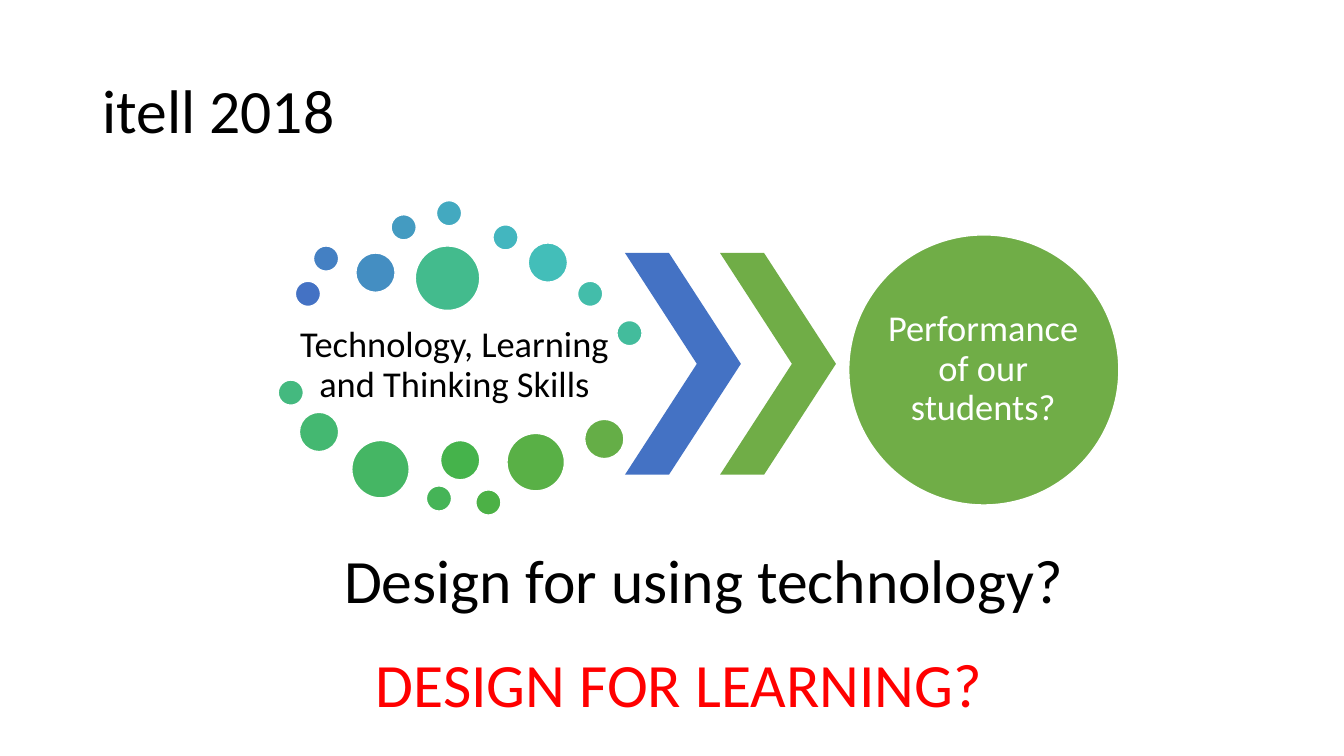
from dataclasses import dataclass
from enum import Enum

from pptx import Presentation
from pptx.dml.color import RGBColor
from pptx.enum.shapes import MSO_SHAPE
from pptx.enum.text import MSO_ANCHOR, PP_ALIGN
from pptx.shapes.autoshape import Shape
from pptx.slide import Slide
from pptx.util import Inches, Length, Pt

COLUMNS, ROWS = 40, 22.5
CELL = Inches(40 / 3) / COLUMNS

BLACK, WHITE, RED = "000000", "FFFFFF", "FF0000"
BLUE, GREEN = "4472C4", "70AD47"


class Size(Enum):
    SMALL = 0.75
    MEDIUM = 1.17
    LARGE = 1.71
    HUGE = 1.92


@dataclass(frozen=True)
class Area:
    column: float
    row: float
    columns: float
    rows: float

    def lengths(self) -> tuple[Length, ...]:
        return tuple(cells(n) for n in (self.column, self.row, self.columns, self.rows))


@dataclass(frozen=True)
class Dot:
    column: float
    row: float
    size: Size
    color: str


@dataclass(frozen=True)
class Label:
    text: str
    area: Area
    points: int
    color: str = BLACK
    align: PP_ALIGN = PP_ALIGN.CENTER
    anchor: MSO_ANCHOR = MSO_ANCHOR.MIDDLE
    spacing: float = 0.9
    inset: float | None = None


DOTS = [
    Dot(8.79, 8.37, Size.SMALL, BLUE),
    Dot(9.33, 7.32, Size.SMALL, "4480C3"),
    Dot(10.59, 7.53, Size.MEDIUM, "448EC2"),
    Dot(11.64, 6.39, Size.SMALL, "449BC1"),
    Dot(12.99, 5.97, Size.SMALL, "43A9C0"),
    Dot(14.67, 6.69, Size.SMALL, "43B6BF"),
    Dot(15.72, 7.23, Size.MEDIUM, "43BEB9"),
    Dot(17.19, 8.37, Size.SMALL, "43BDAA"),
    Dot(18.36, 9.54, Size.SMALL, "43BC9C"),
    Dot(12.36, 7.32, Size.HUGE, "43BB8D"),
    Dot(8.28, 11.31, Size.SMALL, "44B97F"),
    Dot(8.91, 12.27, Size.MEDIUM, "44B871"),
    Dot(10.47, 13.11, Size.LARGE, "45B664"),
    Dot(12.69, 14.46, Size.SMALL, "45B457"),
    Dot(13.11, 13.11, Size.MEDIUM, "45B34B"),
    Dot(14.16, 14.58, Size.SMALL, "4CB146"),
    Dot(15.09, 12.9, Size.LARGE, "59B046"),
    Dot(17.4, 12.48, Size.MEDIUM, "65AE47"),
]

TITLE = Label("itell 2018", Area(2.76, 1.2, 34.5, 4.35), 44, align=PP_ALIGN.LEFT)
SKILLS = Label("Technology, Learning and Thinking Skills",
               Area(8.82, 9.33, 9.42, 3.12), 26, inset=0.1)
PERFORMANCE = Label("Performance of our students?",
                    Area(26.43, 8.16, 5.67, 5.67), 26, WHITE, inset=0)
QUESTIONS = [
    Label("DESIGN FOR LEARNING?", Area(7.53, 19.08, 25.38, 2.52), 44, RED,
          anchor=MSO_ANCHOR.TOP, spacing=1.0),
    Label("Design for using technology?", Area(6.63, 15.99, 28.65, 2.52), 44,
          anchor=MSO_ANCHOR.TOP, spacing=1.0),
]


def cells(count: float) -> Length:
    return Length(round(count * CELL))


def rgb(color: str) -> RGBColor:
    return RGBColor.from_string(color)


def add_label(page: Slide, label: Label) -> None:
    frame = page.shapes.add_textbox(*label.area.lengths()).text_frame
    frame.word_wrap = True
    frame.vertical_anchor = label.anchor
    if label.inset is not None:
        frame.margin_left = frame.margin_right = cells(label.inset)
        frame.margin_top = frame.margin_bottom = cells(label.inset)
    para = frame.paragraphs[0]
    para.text = label.text
    para.alignment = label.align
    para.line_spacing = label.spacing
    para.font.name = "Calibri"
    para.font.size = Pt(label.points)
    para.font.color.rgb = rgb(label.color)


def add_filled(page: Slide, kind: MSO_SHAPE, area: Area, color: str) -> Shape:
    shape = page.shapes.add_shape(kind, *area.lengths())
    shape.shadow.inherit = False
    shape.fill.solid()
    shape.fill.fore_color.rgb = rgb(color)
    shape.line.fill.background()
    return shape


def add_circle(page: Slide, column: float, row: float, size: float, color: str) -> None:
    circle = add_filled(page, MSO_SHAPE.OVAL, Area(column, row, size, size), color)
    circle.line.color.rgb = rgb(WHITE)
    circle.line.width = Pt(1)


def add_chevrons(page: Slide) -> None:
    for index, color in enumerate((BLUE, GREEN)):
        area = Area(18.6 + 2.83 * index, 7.53, 3.45, 6.6)
        chevron = add_filled(page, MSO_SHAPE.CHEVRON, area, color)
        chevron.adjustments[0] = 0.62


def main() -> None:
    deck = Presentation()
    deck.slide_width, deck.slide_height = cells(COLUMNS), cells(ROWS)
    page = deck.slides.add_slide(deck.slide_layouts[6])
    add_label(page, TITLE)
    add_label(page, SKILLS)
    for dot in DOTS:
        add_circle(page, dot.column, dot.row, dot.size.value, dot.color)
    add_chevrons(page)
    add_circle(page, 25.26, 6.99, 8.04, GREEN)
    add_label(page, PERFORMANCE)
    for question in QUESTIONS:
        add_label(page, question)
    deck.save("out.pptx")


if __name__ == "__main__":
    main()
